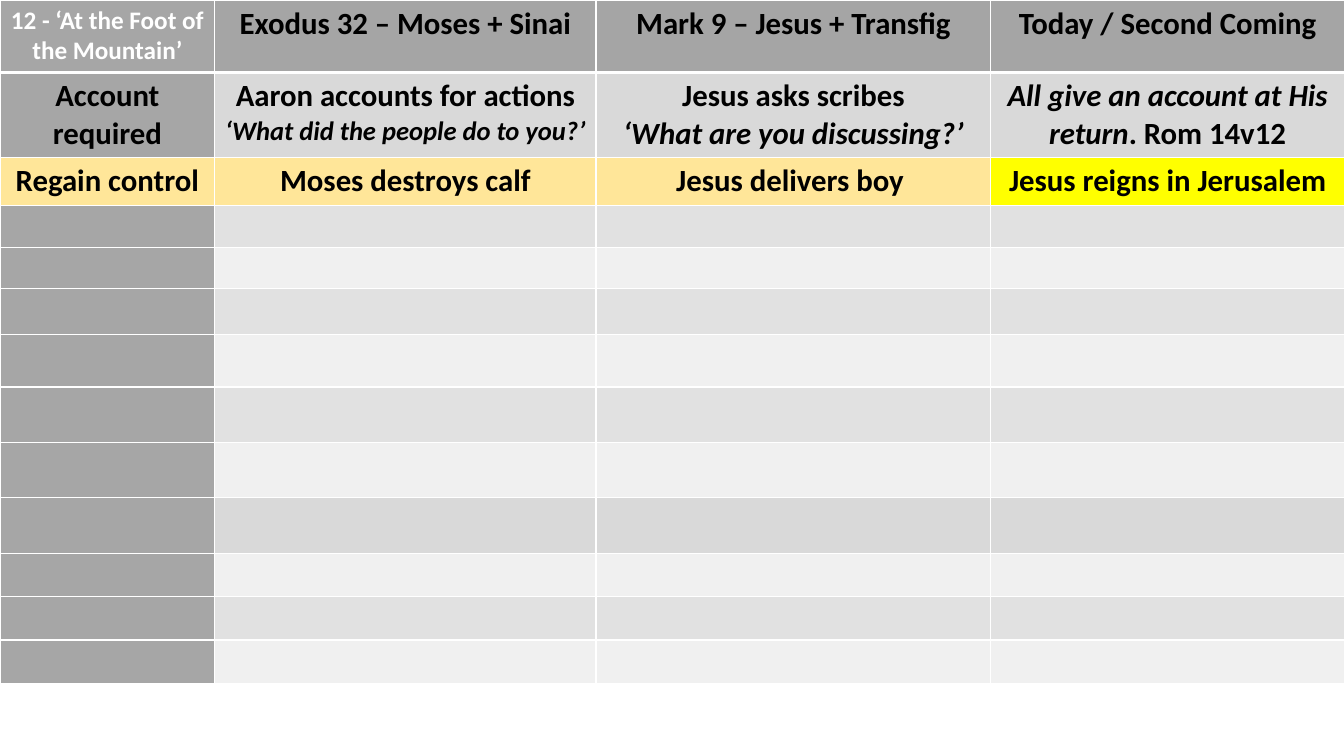
from dataclasses import dataclass

from lxml.etree import SubElement
from pptx import Presentation
from pptx.dml.color import RGBColor
from pptx.enum.text import PP_ALIGN
from pptx.oxml.ns import qn
from pptx.table import _Cell
from pptx.util import Pt


@dataclass(frozen=True)
class Theme:
    font: str = "Calibri"
    white: str = "FFFFFF"
    black: str = "000000"
    label: str = "A6A6A6"
    header: str = "A5A5A5"
    grey: str = "D9D9D9"
    band_dark: str = "E1E1E1"
    band_light: str = "F0F0F0"
    gold: str = "FFE699"
    yellow: str = "FFFF00"
    corner_size: float = 18
    body_size: float = 22
    quote_size: float = 19
    thin_rule: float = 1
    header_rule: float = 3


THEME = Theme()


@dataclass(frozen=True)
class Phrase:
    text: str
    size: float = THEME.body_size
    italic: bool = False
    color: str = THEME.black


@dataclass(frozen=True)
class Entry:
    fill: str
    lines: tuple[tuple[Phrase, ...], ...] = ()


@dataclass(frozen=True)
class Row:
    height: float
    entries: tuple[Entry, ...]


def plain(text: str, fill: str) -> Entry:
    return Entry(fill, ((Phrase(text),),))


def empty_row(height: float, fill: str) -> Row:
    return Row(height, (Entry(THEME.label),) + (Entry(fill),) * 3)


def draw_borders(cell: _Cell, top: float, bottom: float) -> None:
    properties = cell._tc.get_or_add_tcPr()
    rules = {"lnL": THEME.thin_rule, "lnR": THEME.thin_rule, "lnT": top, "lnB": bottom}
    for side, width in rules.items():
        rule = SubElement(properties, qn(f"a:{side}"), w=str(Pt(width)))
        SubElement(SubElement(rule, qn("a:solidFill")), qn("a:srgbClr"), val=THEME.white)


def write_entry(cell: _Cell, entry: Entry) -> None:
    cell.fill.solid()
    cell.fill.fore_color.rgb = RGBColor.from_string(entry.fill)
    for number, line in enumerate(entry.lines):
        frame = cell.text_frame
        paragraph = frame.add_paragraph() if number else frame.paragraphs[0]
        paragraph.alignment = PP_ALIGN.CENTER
        for phrase in line:
            run = paragraph.add_run()
            run.text = phrase.text
            formats = {"name": THEME.font, "size": Pt(phrase.size),
                       "bold": True, "italic": phrase.italic}
            for attribute, value in formats.items():
                setattr(run.font, attribute, value)
            run.font.color.rgb = RGBColor.from_string(phrase.color)


# Comparison of the three mountain stories
COLUMN_WIDTHS = (153.4, 272.4, 282, 252.5)
TABLE_HEIGHT = 486.7

HEADINGS = Row(51.8, (
    Entry(THEME.label, ((Phrase("12 - ‘At the Foot of the Mountain’",
                                THEME.corner_size, color=THEME.white),),)),
    plain("Exodus 32 – Moses + Sinai", THEME.header),
    plain("Mark 9 – Jesus + Transfig", THEME.header),
    plain("Today / Second Coming", THEME.header),
))
ACCOUNT = Row(30.2, (
    plain("Account required", THEME.label),
    Entry(THEME.grey, (
        (Phrase("Aaron accounts for actions"),),
        (Phrase("‘What did the people do to you?’", THEME.quote_size, italic=True),),
    )),
    Entry(THEME.grey, (
        (Phrase("Jesus asks scribes"),),
        (Phrase("‘What are you discussing?’", italic=True),),
    )),
    Entry(THEME.grey, (
        (Phrase("All give an account at His return", italic=True), Phrase(". Rom 14v12")),
    )),
))
CONTROL = Row(28.1, (
    plain("Regain control", THEME.gold),
    plain("Moses destroys calf", THEME.gold),
    plain("Jesus delivers boy ", THEME.gold),
    plain("Jesus reigns in Jerusalem", THEME.yellow),
))

# Empty rows alternate in shade, with one slightly darker band
EMPTY_HEIGHTS = (30.2, 28.8, 33.1, 37.4, 39.6, 39.6, 39.6, 31, 31, 31)
BANDS = [THEME.band_dark, THEME.band_light] * 5
BANDS[6] = THEME.grey
ROWS = [HEADINGS, ACCOUNT, CONTROL, *map(empty_row, EMPTY_HEIGHTS, BANDS)]


def main() -> None:
    deck = Presentation()
    deck.slide_width, deck.slide_height = Pt(960), Pt(540)
    slide = deck.slides.add_slide(deck.slide_layouts[6])

    # Table grid
    comparison = slide.shapes.add_table(len(ROWS), len(COLUMN_WIDTHS), Pt(0), Pt(0),
                                        Pt(sum(COLUMN_WIDTHS)), Pt(TABLE_HEIGHT))
    grid = comparison.table
    for option in ("first_row", "horz_banding"):
        setattr(grid, option, False)
    for column, width in zip(grid.columns, COLUMN_WIDTHS):
        column.width = Pt(width)

    # Table contents
    for index, (grid_row, row) in enumerate(zip(grid.rows, ROWS)):
        grid_row.height = Pt(row.height)
        top = THEME.header_rule if index == 1 else THEME.thin_rule
        bottom = THEME.header_rule if index == 0 else THEME.thin_rule
        for cell, entry in zip(grid_row.cells, row.entries):
            draw_borders(cell, top, bottom)
            write_entry(cell, entry)
    comparison.height = Pt(TABLE_HEIGHT)

    deck.save("out.pptx")


if __name__ == "__main__":
    main()
